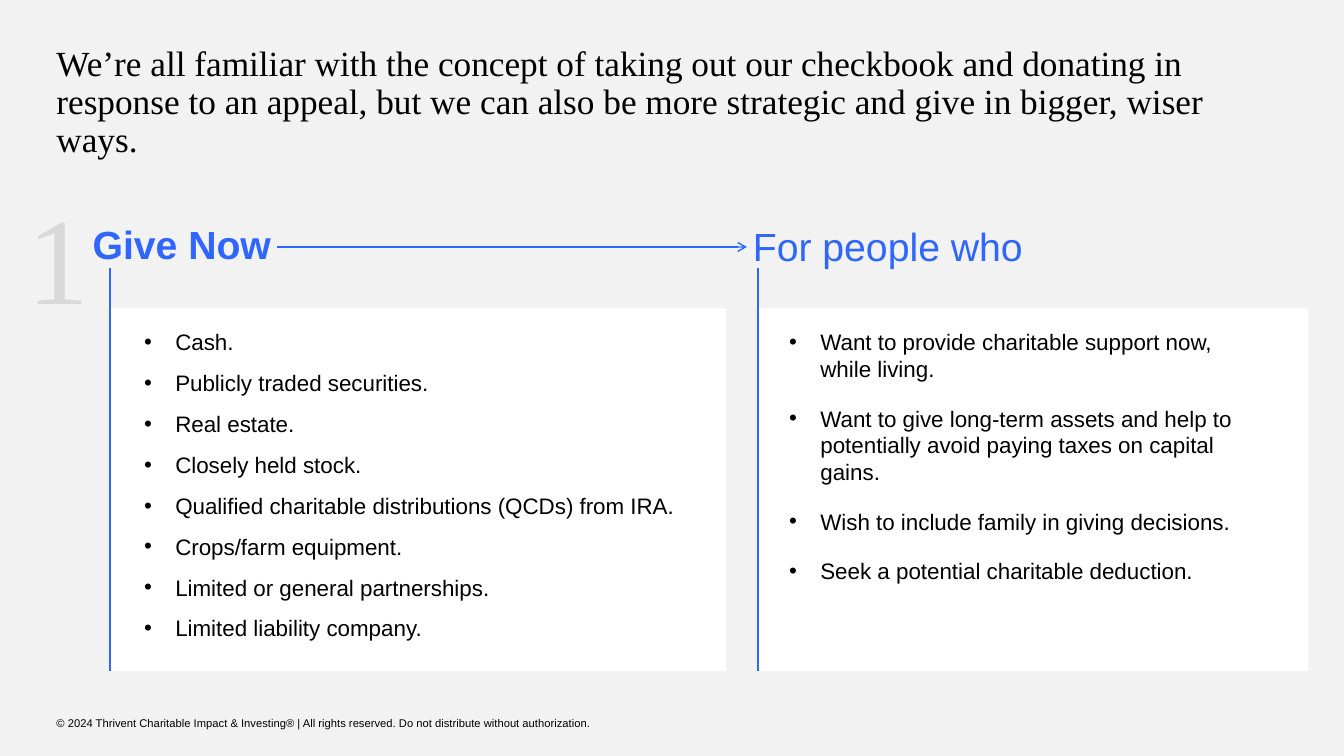
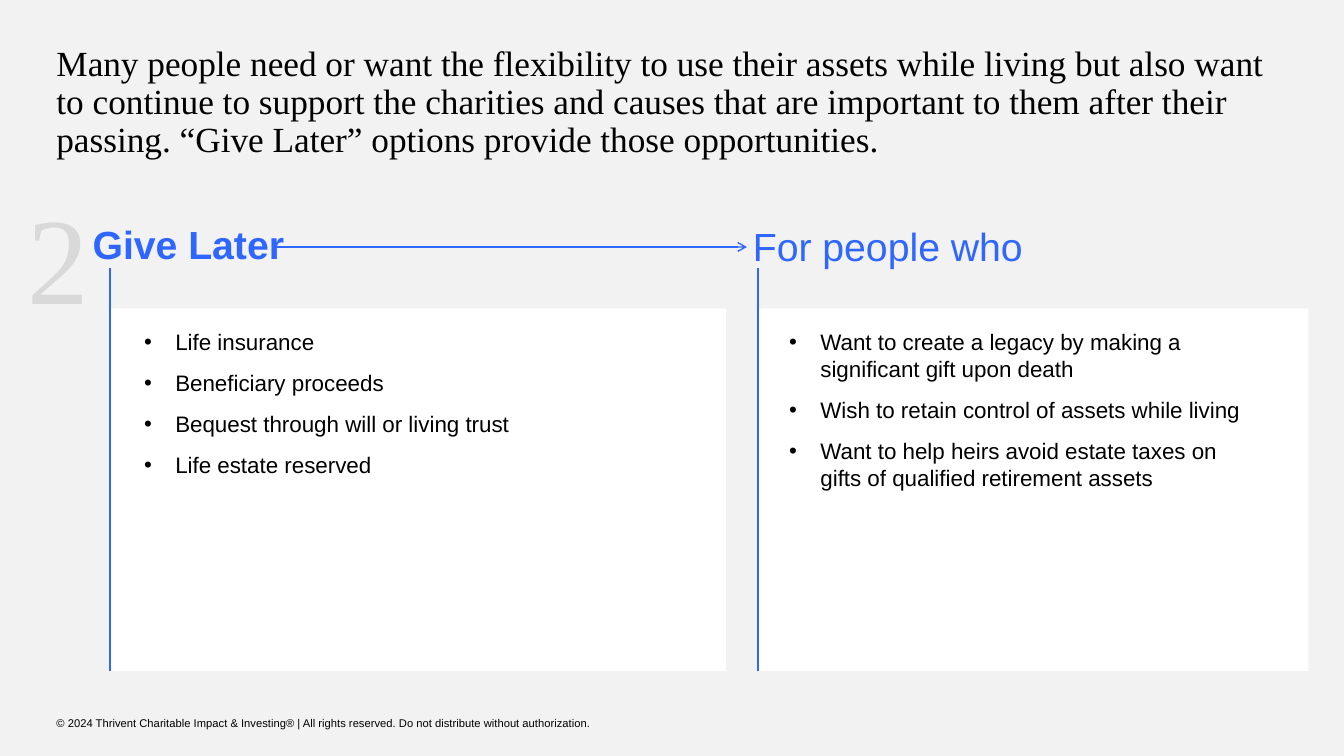
from dataclasses import dataclass
from typing import NamedTuple

from lxml import etree
from pptx import Presentation
from pptx.dml.color import RGBColor
from pptx.enum.shapes import MSO_CONNECTOR, MSO_SHAPE
from pptx.enum.text import MSO_ANCHOR, MSO_AUTO_SIZE, PP_ALIGN
from pptx.oxml.ns import qn
from pptx.util import Inches, Pt

STRAIGHT = MSO_CONNECTOR.STRAIGHT
RECTANGLE = MSO_SHAPE.RECTANGLE
TOP, MIDDLE = MSO_ANCHOR.TOP, MSO_ANCHOR.MIDDLE
LEFT, CENTER = PP_ALIGN.LEFT, PP_ALIGN.CENTER
GROW, FIXED = MSO_AUTO_SIZE.SHAPE_TO_FIT_TEXT, MSO_AUTO_SIZE.NONE

WIDTH, HEIGHT = Inches(13.333), Inches(7.5)
SERIF, SANS = "Times New Roman", "Arial"
BLACK, BLUE, WHITE, PAPER, PALE = "000000", "2E66FF", "FFFFFF", "F2F2F2", "D9D9D9"
COPYRIGHT = (
    "© 2024 Thrivent Charitable Impact & Investing® | All rights reserved. "
    "Do not distribute without authorization."
)
BULLET_INDENT = Inches(0.31)


class Box(NamedTuple):
    """An area in hundredths of the slide's width and height."""

    left: float
    top: float
    width: float
    height: float


class Style(NamedTuple):
    font: str
    size: float
    colour: str
    bold: bool = False
    line_spacing: float = 1.0
    align: PP_ALIGN = LEFT


@dataclass(frozen=True)
class BulletList:
    items: tuple[str, ...]
    height: float
    space_before: float = 0


@dataclass(frozen=True)
class Strategy:
    number: str
    title: str
    name: str
    gifts: BulletList
    people: BulletList


MARGIN = 4.2
PANEL_TOP, PANEL_HEIGHT = 40.8, 48
PANEL_BOTTOM = PANEL_TOP + PANEL_HEIGHT
RULE_TOP, ARROW_ROW = 35.47, 32.67
LIST_TOP = 42.8
GIFTS_PANEL = Box(8.18, PANEL_TOP, 45.83, PANEL_HEIGHT)
PEOPLE_PANEL = Box(56.4, PANEL_TOP, 40.95, PANEL_HEIGHT)

TITLE_STYLE = Style(SERIF, 25.2, BLACK, line_spacing=0.9)
FOOTER_STYLE = Style(SANS, 8, BLACK)
NUMBER_STYLE = Style(SERIF, 88, PALE, align=CENTER)
NAME_STYLE = Style(SANS, 28, BLUE, bold=True, line_spacing=0.9)
PEOPLE_STYLE = Style(SANS, 28, BLUE)
LIST_STYLE = Style(SANS, 16, BLACK)

STRATEGIES = (
    Strategy(
        "1",
        "We’re all familiar with the concept of taking out our checkbook and donating "
        "in response to an appeal, but we can also be more strategic and give in "
        "bigger, wiser ways.",
        "Give Now",
        BulletList(
            (
                "Cash.",
                "Publicly traded securities.",
                "Real estate.",
                "Closely held stock.",
                "Qualified charitable distributions (QCDs) from IRA.",
                "Crops/farm equipment.",
                "Limited or general partnerships.",
                "Limited liability company.",
            ),
            height=43.2,
        ),
        BulletList(
            (
                "Want to provide charitable support now, while living.",
                "Want to give long-term assets and help to potentially avoid paying "
                "taxes on capital gains.",
                "Wish to include family in giving decisions.",
                "Seek a potential charitable deduction.",
            ),
            height=35.47,
            space_before=6,
        ),
    ),
    Strategy(
        "2",
        "Many people need or want the flexibility to use their assets while living but "
        "also want to continue to support the charities and causes that are important "
        "to them after their passing. “Give Later” options provide those opportunities.",
        "Give Later",
        BulletList(
            (
                "Life insurance",
                "Beneficiary proceeds",
                "Bequest through will or living trust",
                "Life estate reserved",
            ),
            height=21.33,
        ),
        BulletList(
            (
                "Want to create a legacy by making a significant gift upon death",
                "Wish to retain control of assets while living",
                "Want to help heirs avoid estate taxes on gifts of qualified "
                "retirement assets",
            ),
            height=23.07,
        ),
    ),
)


def rgb(colour: str) -> RGBColor:
    return RGBColor.from_string(colour)


def across(share: float) -> int:
    return round(WIDTH * share / 100)


def down(share: float) -> int:
    return round(HEIGHT * share / 100)


def place(box: Box) -> tuple[int, int, int, int]:
    return across(box.left), down(box.top), across(box.width), down(box.height)


def add_frame(slide, box: Box, inset: bool = True, anchor=TOP, auto_size=FIXED):
    frame = slide.shapes.add_textbox(*place(box)).text_frame
    frame.word_wrap = True
    frame.auto_size = auto_size
    frame.vertical_anchor = anchor
    if not inset:
        frame.margin_left = frame.margin_right = 0
        frame.margin_top = frame.margin_bottom = 0
    return frame


def write(paragraph, text: str, style: Style) -> None:
    paragraph.alignment = style.align
    paragraph.line_spacing = style.line_spacing
    run = paragraph.add_run()
    run.text = text
    run.font.name = style.font
    run.font.size = Pt(style.size)
    run.font.bold = style.bold
    run.font.color.rgb = rgb(style.colour)


def add_text(slide, box: Box, text: str, style: Style, **frame_options) -> None:
    write(add_frame(slide, box, **frame_options).paragraphs[0], text, style)


def add_bullet(paragraph) -> None:
    properties = paragraph._p.get_or_add_pPr()
    properties.set("marL", str(BULLET_INDENT))
    properties.set("indent", str(-BULLET_INDENT))
    etree.SubElement(properties, qn("a:buFont"), typeface=SANS)
    etree.SubElement(properties, qn("a:buChar"), char="•")


def add_list(slide, left: float, width: float, bullets: BulletList) -> None:
    frame = add_frame(slide, Box(left, LIST_TOP, width, bullets.height), auto_size=GROW)
    for index, item in enumerate(bullets.items):
        paragraph = frame.add_paragraph() if index else frame.paragraphs[0]
        add_bullet(paragraph)
        paragraph.space_before = Pt(bullets.space_before if index else 0)
        paragraph.space_after = Pt(10)
        write(paragraph, item, LIST_STYLE)


def add_panel(slide, box: Box) -> None:
    shape = slide.shapes.add_shape(RECTANGLE, *place(box))
    shape.shadow.inherit = False
    shape.fill.solid()
    shape.fill.fore_color.rgb = rgb(WHITE)
    shape.line.fill.background()


def add_line(
    slide, start: tuple[float, float], end: tuple[float, float], arrow: bool = False
) -> None:
    connector = slide.shapes.add_connector(
        STRAIGHT, across(start[0]), down(start[1]), across(end[0]), down(end[1])
    )
    connector.line.color.rgb = rgb(BLUE)
    connector.line.width = Pt(1)
    if arrow:
        etree.SubElement(connector.line._get_or_add_ln(), qn("a:tailEnd"), type="arrow")
    etree.SubElement(connector._element.spPr, qn("a:effectLst"))


def add_strategy(presentation, strategy: Strategy) -> None:
    slide = presentation.slides.add_slide(presentation.slide_layouts[6])
    add_text(slide, Box(MARGIN, 6.13, 91.65, 12.4), strategy.title, TITLE_STYLE, inset=False)
    add_text(
        slide, Box(MARGIN, 94.53, 45.83, 2.13), COPYRIGHT, FOOTER_STYLE,
        inset=False, anchor=MIDDLE,
    )
    add_text(slide, Box(1.13, 24, 6.38, 18), strategy.number, NUMBER_STYLE, inset=False)

    for panel in (PEOPLE_PANEL, GIFTS_PANEL):
        add_panel(slide, panel)
    add_line(slide, (20.63, ARROW_ROW), (55.58, ARROW_ROW), arrow=True)
    add_text(
        slide, Box(55.28, 28.8, 33.15, 7.6), "For people who", PEOPLE_STYLE, auto_size=GROW
    )
    add_list(slide, 9.98, 42.75, strategy.gifts)
    add_list(slide, 57.98, 35.33, strategy.people)
    add_text(slide, Box(6.15, 29.2, 17.85, 5.33), strategy.name, NAME_STYLE)
    for panel in (GIFTS_PANEL, PEOPLE_PANEL):
        add_line(slide, (panel.left, RULE_TOP), (panel.left, PANEL_BOTTOM))


def main() -> None:
    presentation = Presentation()
    presentation.slide_width, presentation.slide_height = WIDTH, HEIGHT
    background = presentation.slide_master.background.fill
    background.solid()
    background.fore_color.rgb = rgb(PAPER)
    for strategy in STRATEGIES:
        add_strategy(presentation, strategy)
    presentation.save("out.pptx")


if __name__ == "__main__":
    main()
